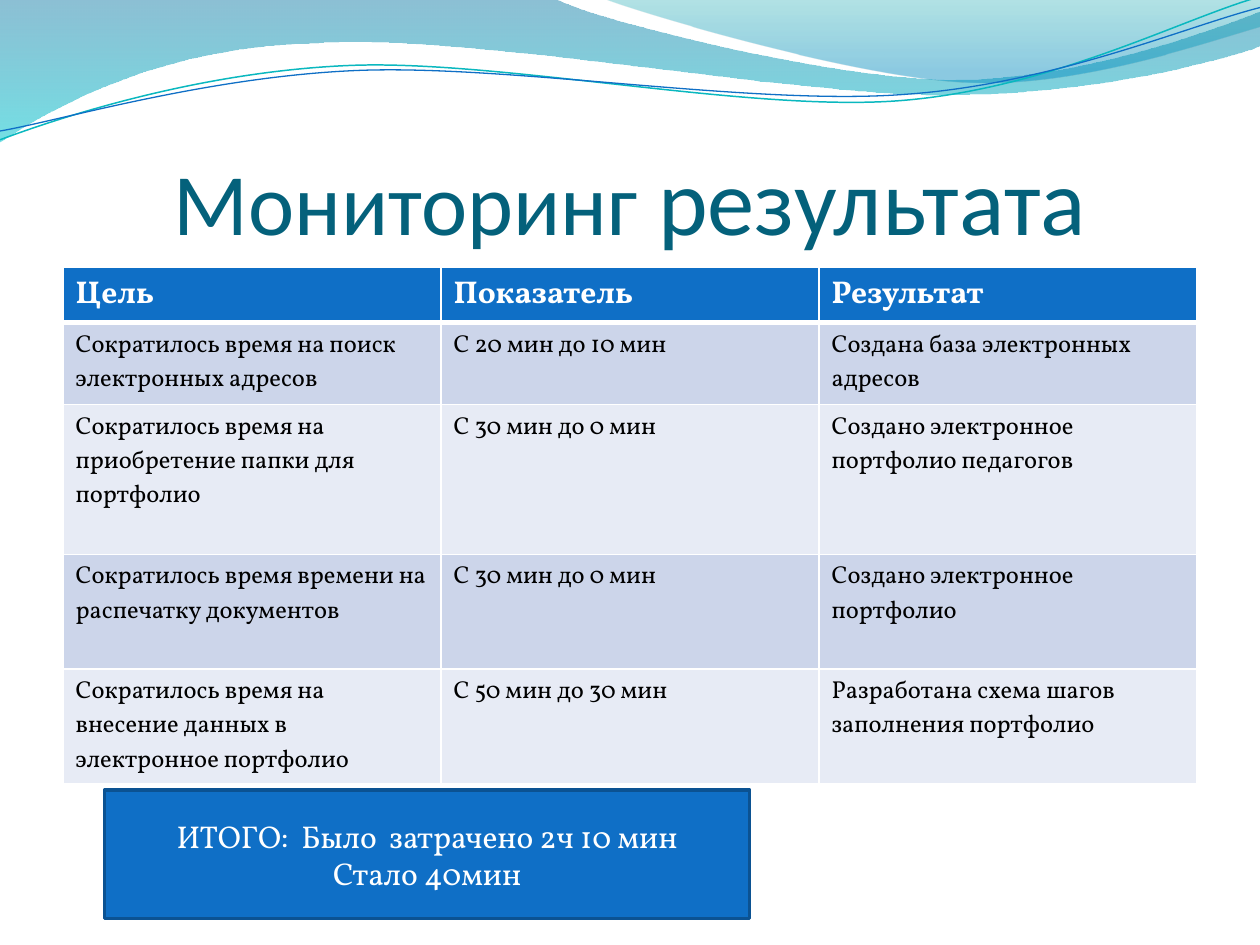
import math

from lxml import etree
from pptx import Presentation
from pptx.dml.color import RGBColor
from pptx.enum import shapes, text
from pptx.oxml import ns
from pptx.util import Inches, Pt

WHITE = RGBColor(0xFF, 0xFF, 0xFF)
BLACK = RGBColor(0, 0, 0)
BLUE = RGBColor(0x0F, 0x6F, 0xC6)
DARK_BLUE = RGBColor(0x0B, 0x52, 0x92)
TEAL = RGBColor(0x0A, 0xB8, 0xBF)
TITLE_COLOR = RGBColor(0x04, 0x61, 0x7B)
BAND_DARK = RGBColor(0xCC, 0xD5, 0xEA)
BAND_LIGHT = RGBColor(0xE7, 0xEB, 0xF5)
DEEP_SEA = RGBColor(0x00, 0x74, 0xA1)
AQUA = RGBColor(0x00, 0xC6, 0xCF)
GREEN_SEA = RGBColor(0x00, 0xA1, 0xA9)
SKY = RGBColor(0x00, 0x8B, 0xBF)

BODY_FONT = "Vollkorn"
TITLE_FONT = "Calibri"
UNITS = 10000
LINE_TILT = -2.7

WIDE_WAVE = [
    [(0, 0)], [(4.4, -0.01)],
    [(4.76, 0.17), (6.64, 0.63), (7.58, 0.63)],
    [(8.53, 0.63), (9.58, 0.26), (10, 0.09)],
    [(10.01, 0.36)],
    [(9.83, 0.44), (8.7, 0.76), (7.46, 0.75)],
    [(6.22, 0.75), (3.82, 0.28), (2.57, 0.34)],
    [(1.29, 0.36), (0.46, 0.83), (-0.01, 1.13)],
    [(0, 0)],
]
RIGHT_WAVE = [
    [(4.79, -0.01)],
    [(5.09, 0.11), (6.82, 0.62), (7.69, 0.65)],
    [(8.56, 0.69), (9.61, 0.32), (10, 0.21)],
    [(10, 0)], [(4.79, -0.01)],
]
TEAL_LINE = [
    [(0, 1.11)],
    [(0.48, 0.93), (1.58, 0.57), (2.77, 0.52)],
    [(3.95, 0.47), (5.93, 0.89), (7.13, 0.8)],
    [(8.33, 0.71), (9.38, 0.15), (9.98, -0.02)],
]
BLUE_LINE = [
    [(0, 1.04)],
    [(0.47, 0.96), (1.64, 0.61), (2.83, 0.56)],
    [(4.03, 0.51), (5.97, 0.84), (7.17, 0.75)],
    [(8.36, 0.67), (9.41, 0.21), (10, 0.06)],
]

ROWS = [
    ("Цель", "Показатель", "Результат"),
    ("Сократилось время на поиск электронных адресов", "С 20 мин до 10 мин",
     "Создана база электронных адресов"),
    ("Сократилось время на приобретение папки для портфолио", "С 30 мин до 0 мин",
     "Создано электронное портфолио педагогов"),
    ("Сократилось время времени на распечатку документов", "С 30 мин до 0 мин",
     "Создано электронное портфолио"),
    ("Сократилось время на внесение данных в электронное портфолио",
     "С 50 мин до 30 мин", "Разработана схема шагов заполнения портфолио"),
]
ROW_HEIGHTS = [0.44, 0.65, 1.19, 0.91, 0.91]


def turn(point, center, degrees):
    angle = math.radians(degrees)
    x, y = point[0] - center[0], point[1] - center[1]
    return (center[0] + x * math.cos(angle) - y * math.sin(angle),
            center[1] + x * math.sin(angle) + y * math.cos(angle))


def bend(outline, segments):
    lines = outline.element.findall(".//" + ns.qn("a:lnTo"))
    steps = iter(lines)
    for segment in segments[1:]:
        group = [next(steps) for point in segment]
        if len(group) == 3:
            curve = etree.Element(ns.qn("a:cubicBezTo"))
            group[0].addprevious(curve)
            for line in group:
                curve.append(line[0])
                line.getparent().remove(line)


def add_outline(page, segments, close):
    points = [(x * UNITS, y * UNITS) for segment in segments for x, y in segment]
    builder = page.shapes.build_freeform(*points[0], scale=Inches(1) / UNITS)
    builder.add_line_segments(points[1:], close=close)
    outline = builder.convert_to_shape()
    outline.shadow.inherit = False
    bend(outline, segments)
    return outline


def add_wave(page, segments, stops):
    wave = add_outline(page, segments, True)
    wave.line.fill.background()
    wave.fill.gradient()
    wave.fill.gradient_angle = 270
    for stop, (position, color, opacity) in zip(wave.fill.gradient_stops, stops):
        stop.position = position
        stop.color.rgb = color
    colors = wave.element.spPr.findall(".//" + ns.qn("a:srgbClr"))
    for element, (position, color, opacity) in zip(colors, stops):
        etree.SubElement(element, ns.qn("a:alpha"), val=str(opacity * 1000))


def add_wave_line(page, segments, center, color, width):
    level = [[turn(point, center, -LINE_TILT) for point in segment] for segment in segments]
    line = add_outline(page, level, False)
    line.rotation = LINE_TILT
    line.fill.background()
    line.line.color.rgb = color
    line.line.width = Pt(width)


def style(span, font, size, color, bold=False):
    span.font.name = font
    span.font.size = Pt(size)
    span.font.color.rgb = color
    span.font.bold = bold


def add_title(page):
    box = page.shapes.add_textbox(Inches(0.5), Inches(0.77), Inches(9), Inches(1.25))
    frame = box.text_frame
    frame.word_wrap = True
    frame.vertical_anchor = text.MSO_ANCHOR.BOTTOM
    frame.margin_left = frame.margin_right = frame.margin_bottom = 0
    frame.margin_top = Inches(0.05)
    para = frame.paragraphs[0]
    para.alignment = text.PP_ALIGN.CENTER
    for words, size in (("Мониторинг ", 50), ("результата", 54)):
        span = para.add_run()
        span.text = words
        style(span, TITLE_FONT, size, TITLE_COLOR)


def add_border(cell, side, width):
    properties = cell._tc.get_or_add_tcPr()
    border = etree.SubElement(properties, ns.qn("a:ln" + side), w=str(Pt(width)))
    fill = etree.SubElement(border, ns.qn("a:solidFill"))
    etree.SubElement(fill, ns.qn("a:srgbClr"), val=str(WHITE))


def fill_cell(cell, words, row):
    header = row == 0
    widths = {"L": 1, "R": 1, "T": 3 if row == 1 else 1, "B": 3 if header else 1}
    for side, width in widths.items():
        add_border(cell, side, width)
    cell.fill.solid()
    cell.fill.fore_color.rgb = BLUE if header else BAND_DARK if row % 2 else BAND_LIGHT
    cell.text_frame.text = words
    style(cell.text_frame.paragraphs[0].runs[0], BODY_FONT,
          18 if header else 14, WHITE if header else BLACK, header)


def add_results_table(page):
    frame = page.shapes.add_table(len(ROWS), len(ROWS[0]), Inches(0.5), Inches(2.12),
                                  Inches(9), Inches(sum(ROW_HEIGHTS)))
    table = frame.table
    for row, (height, words) in enumerate(zip(ROW_HEIGHTS, ROWS)):
        table.rows[row].height = Inches(height)
        for column, entry in enumerate(words):
            fill_cell(table.cell(row, column), entry, row)


def add_total(page):
    box = page.shapes.add_shape(shapes.MSO_SHAPE.RECTANGLE, Inches(0.83), Inches(6.27),
                                Inches(5.12), Inches(1.02))
    box.shadow.inherit = False
    box.fill.solid()
    box.fill.fore_color.rgb = BLUE
    box.line.color.rgb = DARK_BLUE
    box.line.width = Pt(2)
    frame = box.text_frame
    frame.word_wrap = True
    frame.vertical_anchor = text.MSO_ANCHOR.MIDDLE
    frame.text = "ИТОГО:  Было  затрачено 2ч 10 мин\nСтало 40мин"
    for para in frame.paragraphs:
        para.alignment = text.PP_ALIGN.CENTER
        style(para.runs[0], BODY_FONT, 18, WHITE)


def main():
    deck = Presentation()
    deck.slide_width, deck.slide_height = Inches(10), Inches(7.5)
    page = deck.slides.add_slide(deck.slide_layouts[6])
    add_wave(page, WIDE_WAVE, [(0, DEEP_SEA, 45), (1, AQUA, 55)])
    add_wave(page, RIGHT_WAVE, [(0, GREEN_SEA, 30), (0.8, SKY, 45)])
    add_wave_line(page, TEAL_LINE, (4.99, 0.58), TEAL, 0.85)
    add_wave_line(page, BLUE_LINE, (5, 0.59), BLUE, 0.75)
    add_title(page)
    add_results_table(page)
    add_total(page)
    deck.save("out.pptx")


if __name__ == "__main__":
    main()
